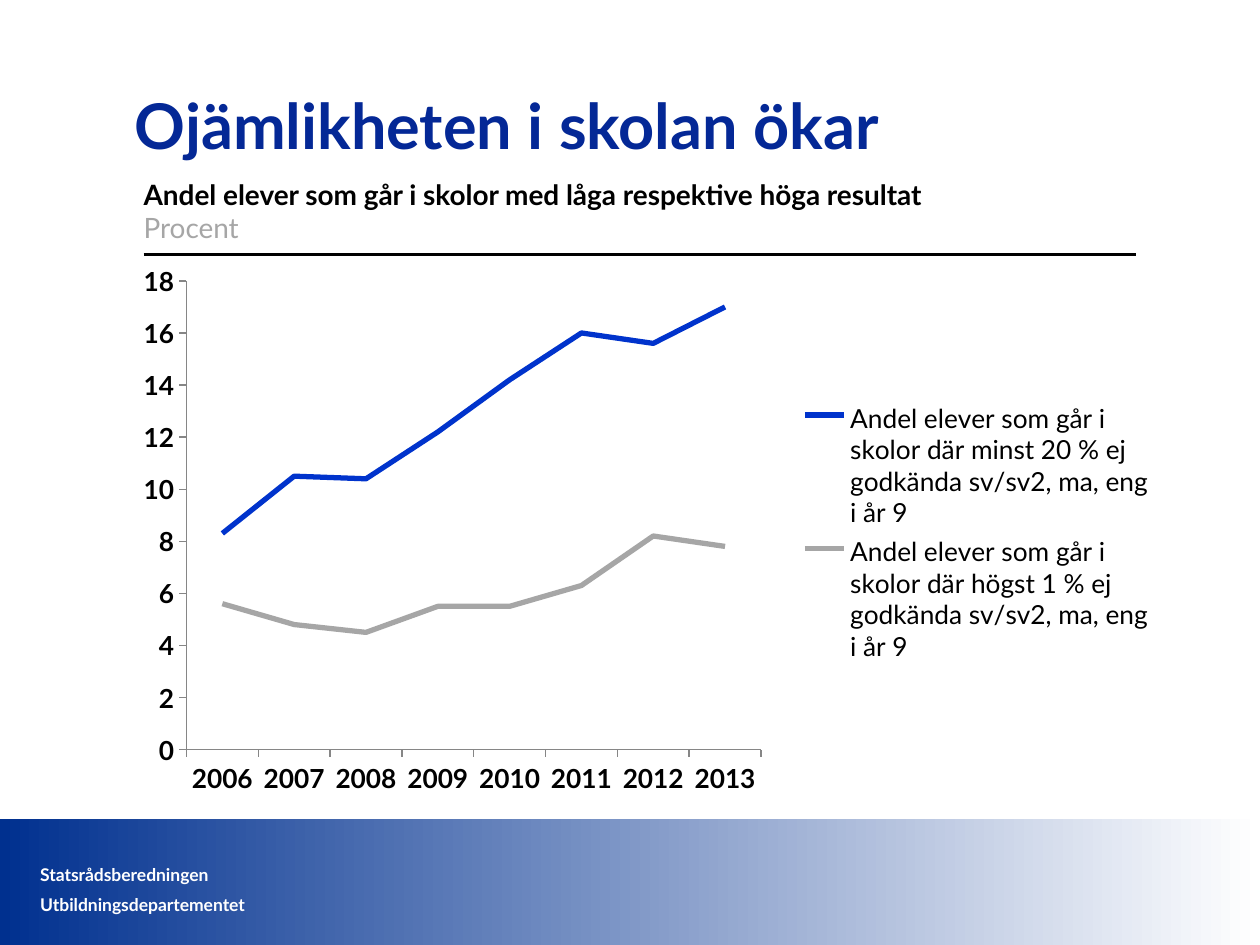
from lxml import etree
from pptx import Presentation
from pptx.chart.data import CategoryChartData
from pptx.dml.color import RGBColor
from pptx.enum.chart import XL_CHART_TYPE, XL_LEGEND_POSITION, XL_TICK_MARK
from pptx.enum.shapes import MSO_CONNECTOR, MSO_SHAPE
from pptx.enum.text import MSO_ANCHOR, MSO_AUTO_SIZE, PP_ALIGN
from pptx.oxml.ns import qn
from pptx.util import Inches, Pt

LINE_CHART = XL_CHART_TYPE.LINE
LEGEND_RIGHT = XL_LEGEND_POSITION.RIGHT
TICK_OUTSIDE, TICK_NONE = XL_TICK_MARK.OUTSIDE, XL_TICK_MARK.NONE
STRAIGHT, RECTANGLE = MSO_CONNECTOR.STRAIGHT, MSO_SHAPE.RECTANGLE
MIDDLE, BOTTOM = MSO_ANCHOR.MIDDLE, MSO_ANCHOR.BOTTOM
NO_AUTOFIT, LEFT = MSO_AUTO_SIZE.NONE, PP_ALIGN.LEFT

# Content
FONT = "Lato"
COLORS = {
    "band": "00308F", "title": "042896", "blue": "0033CC", "gray": "A6A6A6",
    "axis": "868686", "black": "000000", "white": "FFFFFF",
}
TITLE = "Ojämlikheten i skolan ökar"
HEADING = "Andel elever som går i skolor med låga respektive höga resultat"
UNIT = "Procent"
DEPARTMENTS = ["Statsrådsberedningen", "Utbildningsdepartementet"]
YEARS = [str(year) for year in range(2006, 2014)]
SERIES = [
    ("Andel elever som går i skolor där minst 20 % ej godkända sv/sv2, ma, eng i år 9",
     [8.3, 10.5, 10.4, 12.2, 14.2, 16, 15.6, 17], "blue"),
    ("Andel elever som går i skolor där högst 1 % ej godkända sv/sv2, ma, eng i år 9",
     [5.6, 4.8, 4.5, 5.5, 5.5, 6.3, 8.2, 7.8], "gray"),
]
# Left, top, width, height in inches
BAND_BOX = (0, 6.5, 10, 1)
FOOTER_BOX = (0.22, 6.79, 5.31, 0.52)
TITLE_BOX = (0.97, 0.67, 8.08, 0.64)
HEADING_BOX = (1.14, 1.4, 8.45, 0.54)
CHART_BOX = (0.97, 2.02, 8.28, 4.37)
PLOT_BOX = (1.48, 2.23, 4.56, 3.72)
LEGEND_BOX = (6.35, 3.13, 2.8, 2.18)
RULE = (1.14, 2.02, 9.02, 2.02)


def rgb(name):
    return RGBColor.from_string(COLORS[name])


def inches(values):
    return [Inches(value) for value in values]


def format_font(font, size, color="black", bold=False):
    font.name, font.size, font.bold = FONT, Pt(size), bold
    font.color.rgb = rgb(color)


def add_text(paragraph, text, **style):
    run = paragraph.add_run()
    run.text = text
    format_font(run.font, **style)


def prepare_frame(shape, anchor, margins):
    frame = shape.text_frame
    frame.word_wrap = True
    frame.auto_size = NO_AUTOFIT
    frame.vertical_anchor = anchor
    frame.margin_left = frame.margin_right = Inches(margins[0])
    frame.margin_top = frame.margin_bottom = Inches(margins[1])
    return frame


def set_layout(element, box, inner=False):
    """Place a chart part, given in slide inches, as fractions of the chart."""
    old_layout = element.find(qn("c:layout"))
    if old_layout is not None:
        element.remove(old_layout)
    layout = etree.Element(qn("c:layout"))
    manual = etree.SubElement(layout, qn("c:manualLayout"))
    left, top, width, height = CHART_BOX
    settings = [("layoutTarget", "inner")] if inner else []
    settings += [
        ("xMode", "edge"), ("yMode", "edge"),
        ("x", (box[0] - left) / width), ("y", (box[1] - top) / height),
        ("w", box[2] / width), ("h", box[3] / height),
    ]
    for tag, value in settings:
        etree.SubElement(manual, qn(f"c:{tag}")).set("val", str(value))
    # The layout comes first in a plot area and after the position in a legend
    element.insert(0 if inner else 1, layout)


def add_band(slide):
    band = slide.shapes.add_shape(RECTANGLE, *inches(BAND_BOX))
    band.shadow.inherit = False
    band.line.fill.background()
    band.fill.gradient()
    band.fill.gradient_angle = 0
    for stop, color in zip(band.fill.gradient_stops, ("band", "white")):
        stop.color.rgb = rgb(color)

    footer = slide.shapes.add_textbox(*inches(FOOTER_BOX))
    frame = prepare_frame(footer, BOTTOM, (0.1, 0.05))
    for index, department in enumerate(DEPARTMENTS):
        paragraph = frame.add_paragraph() if index else frame.paragraphs[0]
        paragraph.space_before = Pt(5 if index else 0)
        add_text(paragraph, department, size=10, color="white", bold=True)


def add_headings(slide):
    title = slide.shapes.title
    title.left, title.top, title.width, title.height = inches(TITLE_BOX)
    paragraph = prepare_frame(title, MIDDLE, (0.1, 0.05)).paragraphs[0]
    paragraph.alignment = LEFT
    add_text(paragraph, TITLE, size=36, color="title", bold=True)

    heading = slide.shapes.add_textbox(*inches(HEADING_BOX))
    paragraph = prepare_frame(heading, BOTTOM, (0, 0)).paragraphs[0]
    add_text(paragraph, HEADING, size=16, bold=True)
    paragraph.add_line_break()
    add_text(paragraph, UNIT, size=16, color="gray")


def add_line_chart(slide):
    data = CategoryChartData()
    data.categories = YEARS
    for name, values, _ in SERIES:
        data.add_series(name, values)
    chart = slide.shapes.add_chart(LINE_CHART, *inches(CHART_BOX), data).chart
    format_font(chart.font, size=10)
    chart.has_title = False
    plot = chart.plots[0]
    plot.vary_by_categories = False

    for series, (_, _, color) in zip(plot.series, SERIES):
        series.smooth = False
        series.format.line.width = Pt(3)
        series.format.line.color.rgb = rgb(color)

    for axis in (chart.category_axis, chart.value_axis):
        axis.has_major_gridlines = False
        axis.major_tick_mark, axis.minor_tick_mark = TICK_OUTSIDE, TICK_NONE
        axis.format.line.color.rgb = rgb("axis")
        axis.format.line.width = Pt(0.75)
        format_font(axis.tick_labels.font, size=15, bold=True)
    axis = chart.value_axis
    axis.minimum_scale, axis.maximum_scale, axis.major_unit = 0, 18, 2

    chart.has_legend = True
    legend = chart.legend
    legend.position = LEGEND_RIGHT
    legend.include_in_layout = False
    format_font(legend.font, size=15)
    chart_element = chart.element.chart
    set_layout(chart_element.plotArea, PLOT_BOX, inner=True)
    set_layout(chart_element.find(qn("c:legend")), LEGEND_BOX)


def add_rule(slide):
    rule = slide.shapes.add_connector(STRAIGHT, *inches(RULE))
    rule.line.color.rgb = rgb("black")
    rule.line.width = Pt(1.25)
    properties = rule.element.find(qn("p:spPr"))
    etree.SubElement(properties, qn("a:effectLst"))


def main():
    presentation = Presentation()
    presentation.slide_width, presentation.slide_height = Inches(10), Inches(7.5)
    slide = presentation.slides.add_slide(presentation.slide_layouts[5])
    add_band(slide)
    add_headings(slide)
    add_line_chart(slide)
    add_rule(slide)
    presentation.save("out.pptx")


if __name__ == "__main__":
    main()
